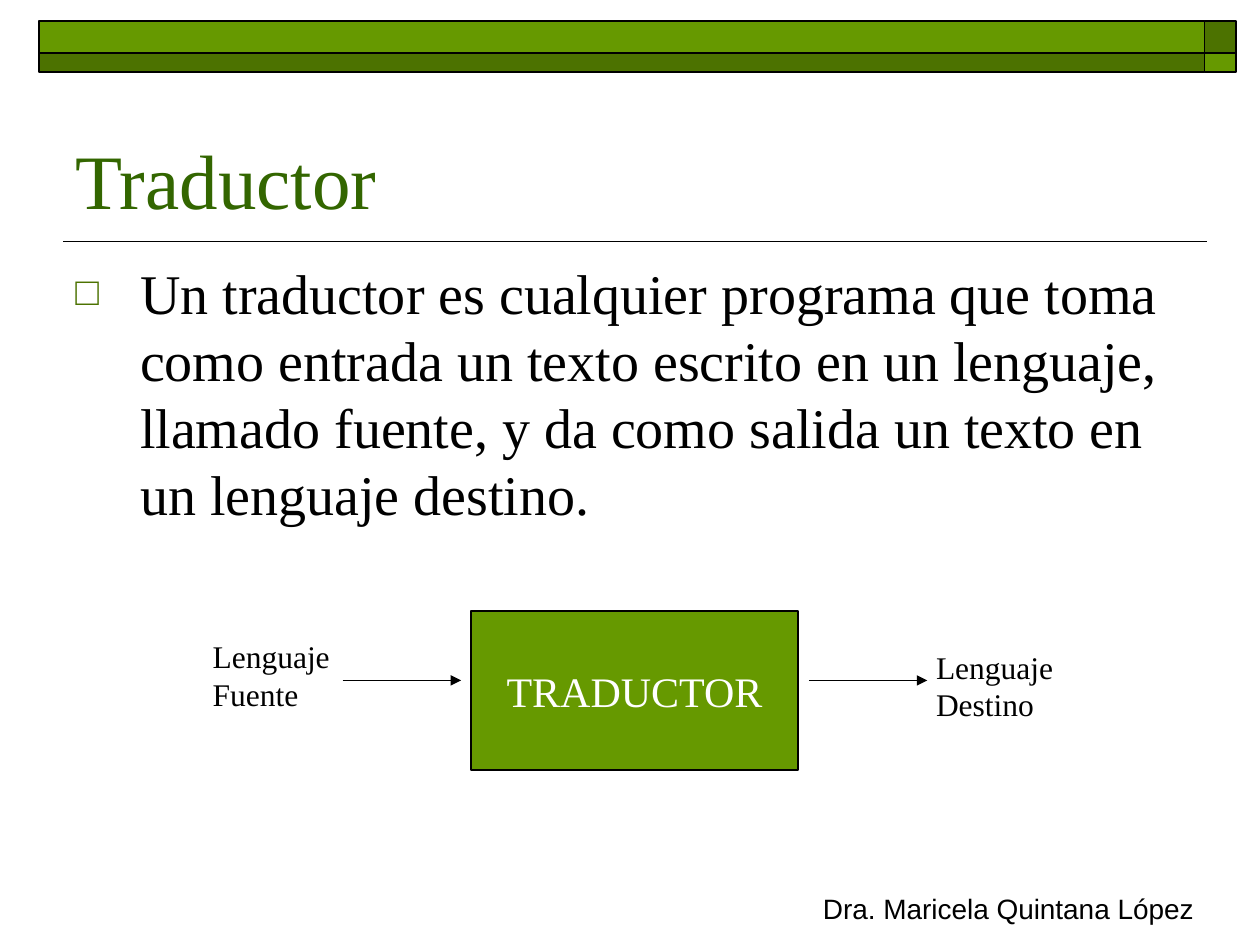
from lxml import etree
from pptx import Presentation
from pptx.dml.color import RGBColor
from pptx.enum import shapes, text
from pptx.oxml.ns import qn
from pptx.util import Pt

GREEN, DARK, TITLE, BLACK, WHITE = "669900", "4C7200", "336600", "000000", "FFFFFF"
SERIF, SANS = "Times New Roman", "Arial"


def color(value):
    return RGBColor.from_string(value)


class SlideBuilder:
    """Hold the style and the current slide, and draw each kind of element."""

    def __init__(self, presentation):
        self.slide = presentation.slides.add_slide(presentation.slide_layouts[5])

    def fill_text(self, shape, lines, size, ink=BLACK, font=SERIF, align=text.PP_ALIGN.LEFT,
                  anchor=text.MSO_ANCHOR.TOP, wrap=True):
        frame = shape.text_frame
        frame.word_wrap = wrap
        frame.auto_size = text.MSO_AUTO_SIZE.NONE
        frame.vertical_anchor = anchor
        for index, line in enumerate(lines):
            paragraph = frame.add_paragraph() if index else frame.paragraphs[0]
            paragraph.alignment = align
            run = paragraph.add_run()
            run.text = line
            run.font.name = font
            run.font.size = Pt(size)
            run.font.color.rgb = color(ink)

    def title(self, box, words):
        shape = self.slide.shapes.title
        shape.left, shape.top, shape.width, shape.height = map(Pt, box)
        self.fill_text(shape, [words], 44, TITLE, anchor=text.MSO_ANCHOR.BOTTOM)

    def label(self, box, lines, size, **style):
        shape = self.slide.shapes.add_textbox(*map(Pt, box))
        self.fill_text(shape, lines, size, **style)
        return shape

    def bullet(self, box, words, indent):
        shape = self.label(box, [words], 32)
        paragraph = shape.text_frame.paragraphs[0]
        paragraph.space_before = Pt(6.4)
        properties = paragraph._p.get_or_add_pPr()
        properties.set("marL", str(Pt(indent)))
        properties.set("indent", str(Pt(-indent)))
        bullet_color = etree.SubElement(properties, qn("a:buClr"))
        etree.SubElement(bullet_color, qn("a:srgbClr"), val=DARK)
        etree.SubElement(properties, qn("a:buSzPct"), val="70000")
        etree.SubElement(properties, qn("a:buFont"), typeface=SANS)
        etree.SubElement(properties, qn("a:buChar"), char="□")

    def rectangle(self, box, fill):
        shape = self.slide.shapes.add_shape(shapes.MSO_SHAPE.RECTANGLE, *map(Pt, box))
        shape.shadow.inherit = False
        shape.fill.solid()
        shape.fill.fore_color.rgb = color(fill)
        shape.line.color.rgb = color(BLACK)
        shape.line.width = Pt(1)
        return shape

    def line(self, start, end, y, arrow=False):
        connector = self.slide.shapes.add_connector(
            shapes.MSO_CONNECTOR.STRAIGHT, Pt(start), Pt(y), Pt(end), Pt(y))
        connector.line.color.rgb = color(BLACK)
        connector.line.width = Pt(1)
        if arrow:
            etree.SubElement(connector.line._get_or_add_ln(), qn("a:tailEnd"), type="triangle")
        etree.SubElement(connector._element.spPr, qn("a:effectLst"))


def main():
    presentation = Presentation()
    presentation.slide_width, presentation.slide_height = Pt(720), Pt(540)
    builder = SlideBuilder(presentation)

    builder.line(36, 690, 138)
    columns = [(22.3, 666), (688.3, 18)]
    rows = [(12.2, 18), (30.2, 10.8)]
    for row, (top, height) in enumerate(rows):
        for column, (left, width) in enumerate(columns):
            fill = GREEN if row == column else DARK
            builder.rectangle((left, top, width, height), fill)

    builder.title((36, 42, 648, 90), "Traductor")
    builder.bullet(
        (36, 144, 648, 338),
        "Un traductor es cualquier programa que toma como entrada un texto escrito en un "
        "lenguaje, llamado fuente, y da como salida un texto en un lenguaje destino.",
        37)

    translator = builder.rectangle((269, 349.2, 187.2, 90.7), GREEN)
    builder.fill_text(translator, ["TRADUCTOR"], 24, WHITE, align=text.PP_ALIGN.CENTER,
                      anchor=text.MSO_ANCHOR.MIDDLE, wrap=False)
    for left, top, role in [(114.5, 360.7, "Fuente"), (527.8, 366.5, "Destino")]:
        builder.label((left, top, 81.4, 50.4), ["Lenguaje", role], 18, wrap=False)
    for start in (195.8, 462.2):
        builder.line(start, start + 67.7, 388.8, arrow=True)

    builder.label((462.2, 506.2, 228.2, 36), ["Dra. Maricela Quintana López"], 16,
                  font=SANS, align=text.PP_ALIGN.CENTER)
    presentation.save("out.pptx")


if __name__ == "__main__":
    main()
